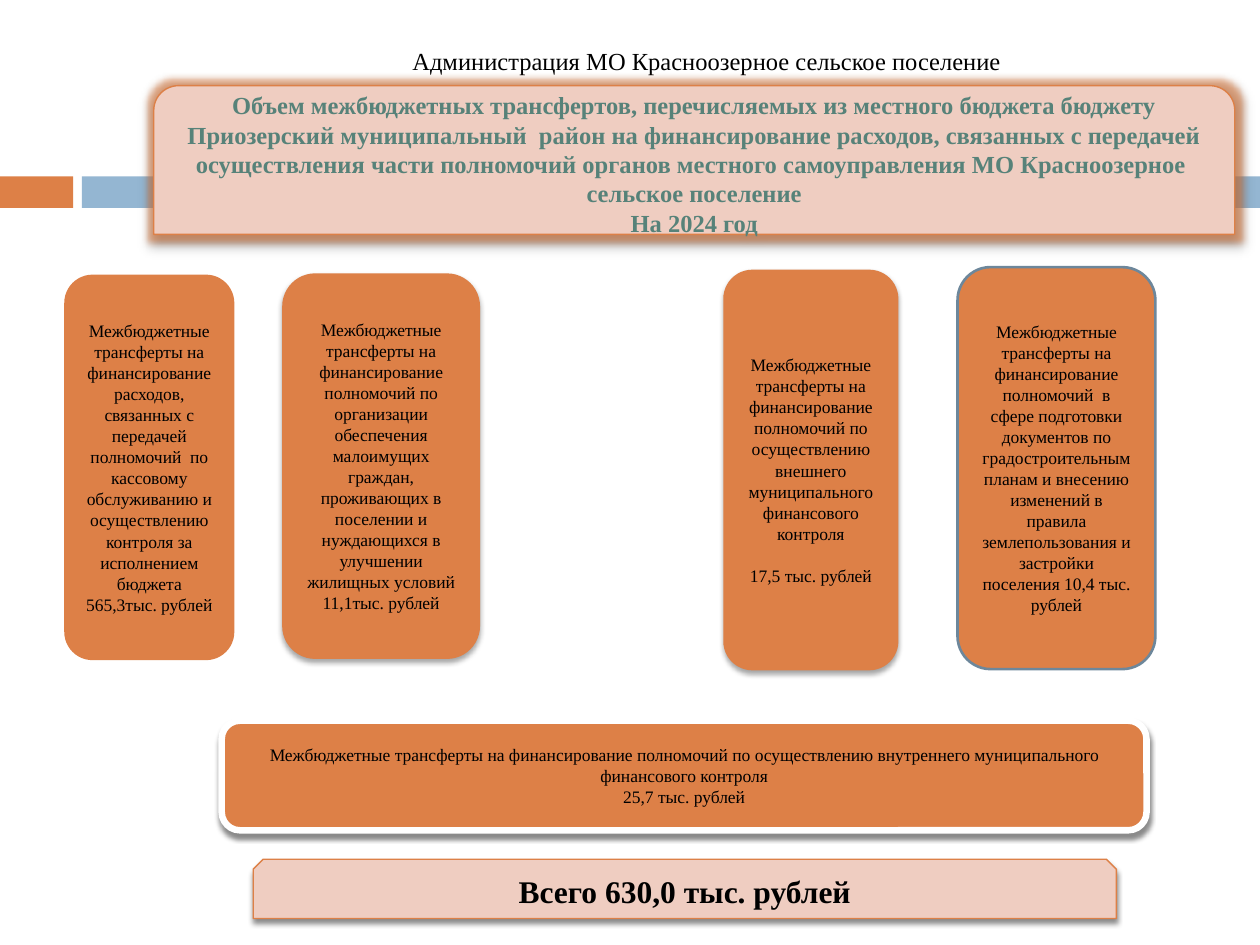
from lxml.etree import SubElement
from pptx import Presentation
from pptx.dml.color import RGBColor
from pptx.enum.shapes import MSO_SHAPE
from pptx.enum.text import MSO_ANCHOR, PP_ALIGN
from pptx.oxml.ns import qn
from pptx.util import Inches, Pt

THEME = {
    "font": "Times New Roman",
    "orange": "DD8047", "blue": "94B6D2", "pale": "EFCDC1",
    "slate": "6D879B", "green": "578279", "white": "FFFFFF", "black": "000000",
    "title": 14, "card": 10, "total": 18,
}

# Shadows: opacity in percent, blur and distance in points
BANNER_SHADOW = (43, 5, 2)
CARD_SHADOW = (35, 3, 2)
STRONG_SHADOW = (45, 3, 2.4)

TITLE = "Администрация МО Красноозерное сельское поселение"
TITLE_AT = (1.57, 0.29, 8.08, 0.39)
BANDS = [((0, 1.4, 0.58, 0.25), "orange"), ((0.65, 1.4, 9.35, 0.25), "blue")]

BANNER = {
    "at": (1.22, 0.68, 8.58, 1.18), "kind": MSO_SHAPE.ROUND_2_SAME_RECTANGLE,
    "fill": "pale", "line": ("orange", 0.79), "shadow": BANNER_SHADOW, "glow": 8,
    "size": "title", "color": "green", "bold": True,
    "text": [
        "Объем межбюджетных трансфертов, перечисляемых из местного бюджета бюджету "
        "Приозерский муниципальный  район на финансирование расходов, связанных с "
        "передачей осуществления части полномочий органов местного самоуправления "
        "МО Красноозерное  сельское поселение",
        "На 2024 год",
    ],
}
CARDS = [
    {
        "at": (0.51, 2.18, 1.35, 3.06),
        "text": [
            "Межбюджетные трансферты на финансирование расходов, связанных с передачей "
            "полномочий  по кассовому обслуживанию и осуществлению контроля за "
            "исполнением бюджета",
            "565,3тыс. рублей",
        ],
    },
    {
        "at": (2.24, 2.17, 1.57, 3.06), "shadow": CARD_SHADOW,
        "text": [
            "Межбюджетные трансферты на",
            "финансирование полномочий по организации обеспечения малоимущих граждан, "
            "проживающих в поселении и нуждающихся в улучшении жилищных условий",
            "11,1тыс. рублей",
        ],
    },
    {
        "at": (5.74, 2.14, 1.39, 3.18), "shadow": CARD_SHADOW, "amount_gap": 12,
        "text": [
            "Межбюджетные трансферты на финансирование полномочий по осуществлению "
            "внешнего муниципального финансового контроля",
            "17,5 тыс. рублей",
        ],
    },
    {
        "at": (7.6, 2.12, 1.57, 3.19), "kind": MSO_SHAPE.ROUNDED_RECTANGLE,
        "line": ("slate", 1.5),
        "text": [
            "Межбюджетные трансферты на финансирование полномочий  в сфере подготовки "
            "документов по градостроительным планам и внесению изменений в правила "
            "землепользования и застройки поселения 10,4 тыс. рублей",
        ],
    },
    {
        "at": (1.76, 5.72, 7.34, 0.87), "kind": MSO_SHAPE.ROUNDED_RECTANGLE,
        "line": ("white", 3.75), "shadow": STRONG_SHADOW,
        "text": [
            "Межбюджетные трансферты на финансирование полномочий по осуществлению "
            "внутреннего муниципального финансового контроля",
            "25,7 тыс. рублей",
        ],
    },
]
TOTAL = {
    "at": (2.01, 6.82, 6.85, 0.47), "kind": MSO_SHAPE.SNIP_2_SAME_RECTANGLE,
    "fill": "pale", "line": ("orange", 0.79), "shadow": STRONG_SHADOW,
    "size": "total", "bold": True, "text": ["Всего 630,0 тыс. рублей"],
}


def rgb(name):
    return RGBColor.from_string(THEME[name])


def write(frame, lines, size="card", color="black", bold=False):
    frame.text = "\n".join(lines)
    frame.word_wrap = True
    frame.vertical_anchor = MSO_ANCHOR.MIDDLE
    for para in frame.paragraphs:
        para.alignment = PP_ALIGN.CENTER
        for span in para.runs:
            span.font.name = THEME["font"]
            span.font.size = Pt(THEME[size])
            span.font.bold = bold
            span.font.color.rgb = rgb(color)


def add_effect(shape, tag, color, opacity, **settings):
    effects = shape._element.spPr.find(qn("a:effectLst"))
    effect = SubElement(effects, qn(tag), {key: str(value) for key, value in settings.items()})
    tint = SubElement(effect, qn("a:srgbClr"), val=THEME[color])
    SubElement(tint, qn("a:alpha"), val=str(opacity * 1000))


def add_box(slide, at, fill="orange", kind=MSO_SHAPE.RECTANGLE, line=None):
    box = slide.shapes.add_shape(kind, *map(Inches, at))
    box.shadow.inherit = False
    box.fill.solid()
    box.fill.fore_color.rgb = rgb(fill)
    if line:
        color, width = line
        box.line.color.rgb = rgb(color)
        box.line.width = Pt(width)
    else:
        box.line.fill.background()
    return box


def add_panel(slide, panel):
    """Draw one filled box with its text, glow and shadow."""
    kind = panel.get("kind", MSO_SHAPE.FLOWCHART_ALTERNATE_PROCESS)
    box = add_box(slide, panel["at"], panel.get("fill", "orange"), kind, panel.get("line"))
    if "glow" in panel:
        add_effect(box, "a:glow", "orange", 60, rad=Pt(panel["glow"]))
    if "shadow" in panel:
        opacity, blur, distance = panel["shadow"]
        add_effect(box, "a:outerShdw", "black", opacity, blurRad=Pt(blur),
                   dist=Pt(distance), dir=90 * 60000, rotWithShape=0)
    write(box.text_frame, panel["text"], panel.get("size", "card"),
          panel.get("color", "black"), panel.get("bold", False))
    if "amount_gap" in panel:
        box.text_frame.paragraphs[-1].space_before = Pt(panel["amount_gap"])


def main():
    deck = Presentation()
    deck.slide_width, deck.slide_height = Inches(10), Inches(7.5)
    slide = deck.slides.add_slide(deck.slide_layouts.get_by_name("Title Only"))

    title = slide.shapes.title
    title.left, title.top, title.width, title.height = map(Inches, TITLE_AT)
    write(title.text_frame, [TITLE], "title")

    for at, color in BANDS:
        add_box(slide, at, color)
    for panel in [BANNER, *CARDS, TOTAL]:
        add_panel(slide, panel)
    deck.save("out.pptx")


if __name__ == "__main__":
    main()
